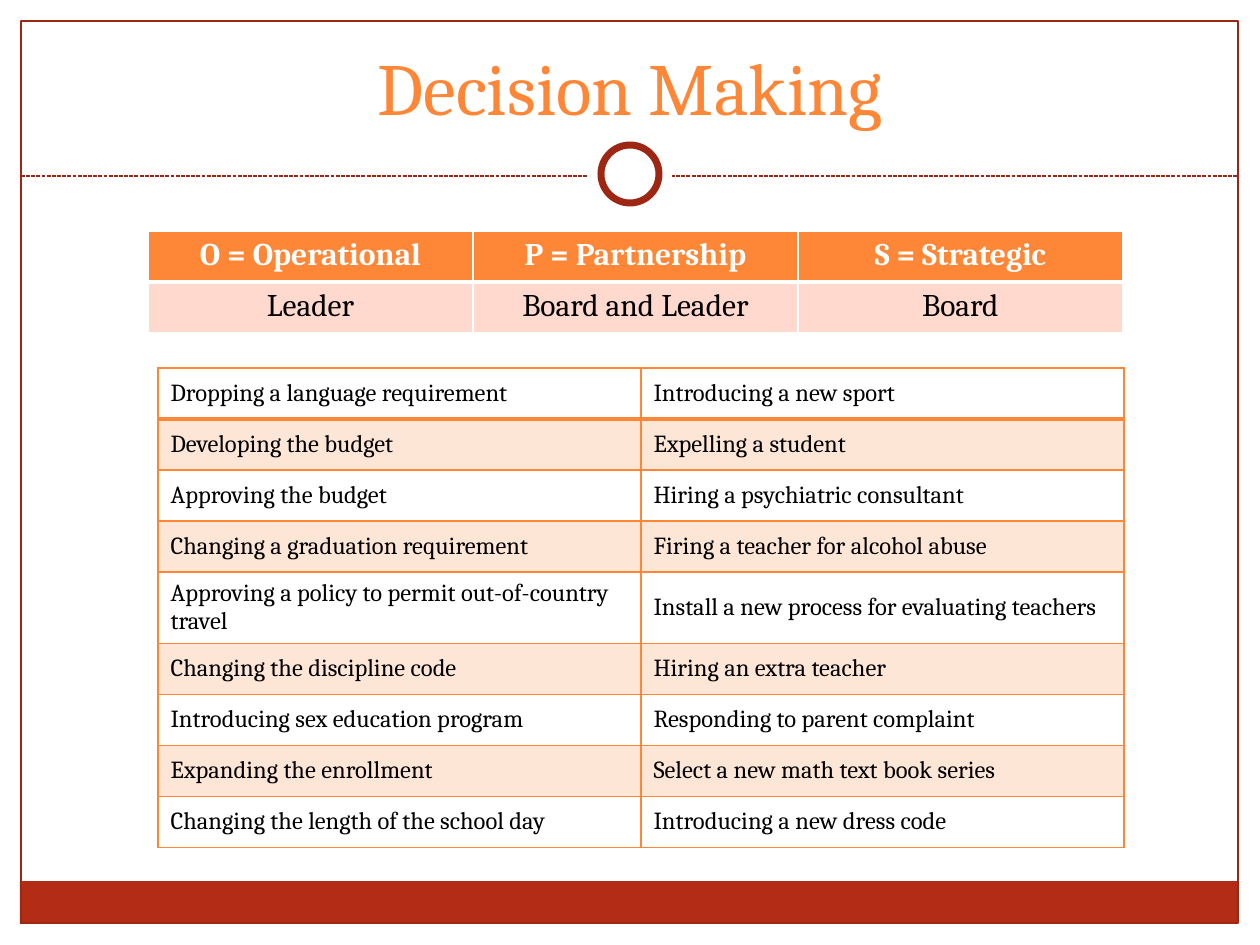
"""Build the Decision Making slide with its key and its list of decisions."""
from lxml.etree import SubElement
from pptx import Presentation
from pptx.dml.color import RGBColor
from pptx.enum.dml import MSO_LINE
from pptx.enum.shapes import MSO_CONNECTOR as CONN, MSO_SHAPE as SHAPE
from pptx.enum.text import MSO_ANCHOR as ANCHOR, PP_ALIGN as ALIGN
from pptx.oxml.ns import qn
from pptx.util import Pt

PX = 914400 / 126
FONT = "Cambria"
COLORS = {
    "white": "FFFFFF",
    "black": "000000",
    "orange": "FE8637",
    "pink": "FFD9CE",
    "red": "B32C16",
    "dark_red": "9E2713",
}
KEY = [
    ("O = Operational", "P = Partnership", "S = Strategic"),
    ("Leader", "Board and Leader", "Board"),
]
DECISIONS = [
    ("Dropping a language requirement", "Introducing a new sport"),
    ("Developing the budget", "Expelling a student"),
    ("Approving the budget", "Hiring a psychiatric consultant"),
    ("Changing a graduation requirement", "Firing a teacher for alcohol abuse"),
    ("Approving a policy to permit out-of-country travel",
     "Install a new process for evaluating teachers"),
    ("Changing the discipline code", "Hiring an extra teacher"),
    ("Introducing sex education program", "Responding to parent complaint"),
    ("Expanding the enrollment", "Select a new math text book series"),
    ("Changing the length of the school day", "Introducing a new dress code"),
]


def px(*lengths):
    """Turn pixel lengths into EMU."""
    return [round(n * PX) for n in lengths]


def rgb(name):
    """Look up a colour by name."""
    return RGBColor.from_string(COLORS[name])


def paint(fill, color):
    """Fill with a named colour, or with nothing."""
    if color is None:
        fill.background()
    else:
        fill.solid()
        fill.fore_color.rgb = rgb(color)


def add_shape(s, kind, box, fill=None, line=None, width=1):
    """Add a preset shape with an optional fill and outline."""
    sp = s.shapes.add_shape(kind, *px(*box))
    sp.shadow.inherit = False
    paint(sp.fill, fill)
    paint(sp.line.fill, line)
    if line:
        sp.line.width = Pt(width)


def add_rule(s, x1, x2, y):
    """Add a dashed horizontal rule."""
    rule = s.shapes.add_connector(CONN.STRAIGHT, *px(x1, y, x2, y))
    rule.line.color.rgb = rgb("dark_red")
    rule.line.width = Pt(0.75)
    rule.line.dash_style = MSO_LINE.SQUARE_DOT
    SubElement(rule._element.spPr, qn("a:effectLst"))


def write(tf, text, size, color, align, bold=False):
    """Write one run into the first paragraph of a text frame."""
    p = tf.paragraphs[0]
    p.alignment = align
    r = p.add_run()
    r.text = text
    r.font.name = FONT
    r.font.size = Pt(size)
    r.font.bold = bold
    r.font.color.rgb = rgb(color)


def add_title(s, text, box):
    """Add the centred slide title."""
    tf = s.shapes.add_textbox(*px(*box)).text_frame
    tf.word_wrap = True
    tf.vertical_anchor = ANCHOR.BOTTOM
    write(tf, text, 42, "orange", ALIGN.CENTER)


def set_borders(cell, color, top, bottom):
    """Draw the four borders of a cell, with one point at the sides."""
    tc_pr = cell._tc.get_or_add_tcPr()
    sides = {"L": 1, "R": 1, "T": top, "B": bottom}
    for i, (side, width) in enumerate(sides.items()):
        ln = SubElement(tc_pr, qn(f"a:ln{side}"), w=str(Pt(width)))
        fill = SubElement(ln, qn("a:solidFill"))
        SubElement(fill, qn("a:srgbClr"), val=COLORS[color])
        tc_pr.insert(i, ln)


def set_alpha(cell, percent):
    """Make the solid fill of a cell partly transparent."""
    color = cell._tc.tcPr.find(qn("a:solidFill")).find(qn("a:srgbClr"))
    SubElement(color, qn("a:alpha"), val=str(percent * 1000))


def add_table(s, rows, left, top, col_width, row_height, border, first_rule):
    """Add a bordered table and yield each cell with its row and text."""
    n_rows, n_cols = len(rows), len(rows[0])
    size = (col_width * n_cols, row_height * n_rows)
    table = s.shapes.add_table(n_rows, n_cols, *px(left, top, *size)).table
    table.first_row = table.horz_banding = False
    for col in table.columns:
        col.width = px(col_width)[0]
    for i, texts in enumerate(rows):
        table.rows[i].height = px(row_height)[0]
        for j, text in enumerate(texts):
            cell = table.cell(i, j)
            set_borders(cell, border, first_rule if i == 1 else 1,
                        first_rule if i == 0 else 1)
            yield cell, i, text


def add_key(s):
    """Add the table that tells who decides what."""
    for cell, i, text in add_table(s, KEY, 148, 231, 325, 51, "white", 3):
        head = i == 0
        paint(cell.fill, "orange" if head else "pink")
        write(cell.text_frame, text, 18, "white" if head else "black",
              ALIGN.CENTER, head)


def add_decisions(s):
    """Add the table of decisions, with every second row tinted."""
    for cell, i, text in add_table(s, DECISIONS, 158, 368, 483, 51, "orange", 2):
        tinted = i % 2 == 1
        paint(cell.fill, "orange" if tinted else None)
        if tinted:
            set_alpha(cell, 20)
        cell.vertical_anchor = ANCHOR.MIDDLE
        write(cell.text_frame, text, 14, "black", ALIGN.LEFT)


def main():
    """Build and save the slide."""
    prs = Presentation()
    prs.slide_width, prs.slide_height = px(1260, 945)
    s = prs.slides.add_slide(prs.slide_layouts[6])
    add_shape(s, SHAPE.RECTANGLE, (20, 881, 1218, 43), "red")
    add_shape(s, SHAPE.RECTANGLE, (21, 21, 1217, 902), None, "dark_red", 0.75)
    add_rule(s, 21, 1238, 176)
    add_shape(s, SHAPE.OVAL, (588, 132, 84, 84), "white")
    add_shape(s, SHAPE.OVAL, (601, 145, 58, 58), "white", "dark_red", 4)
    add_title(s, "Decision Making", (42, 32, 1176, 104))
    add_key(s)
    add_decisions(s)
    prs.save("out.pptx")


if __name__ == "__main__":
    main()
